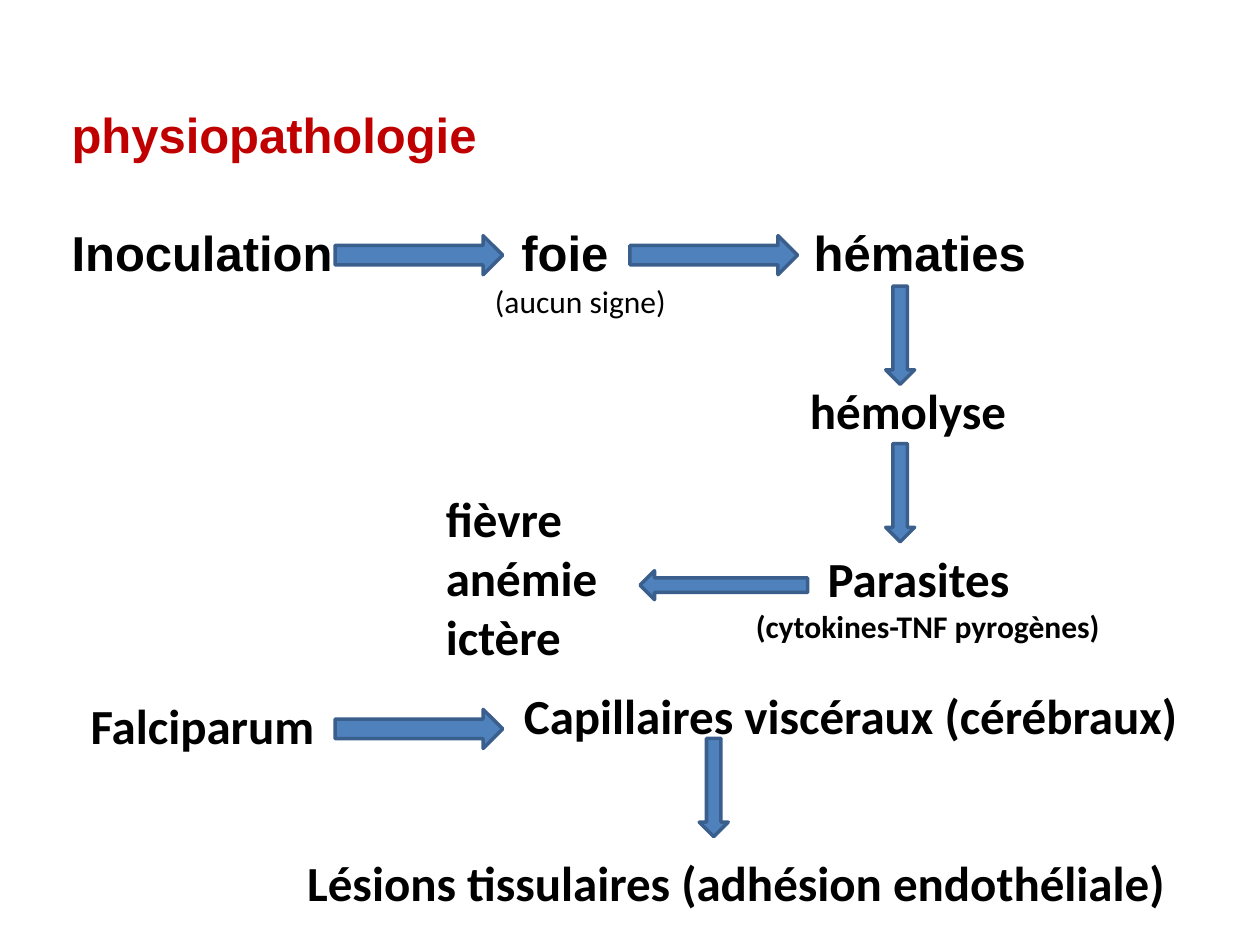
from pptx import Presentation
from pptx.dml.color import RGBColor
from pptx.enum.shapes import MSO_SHAPE as SHAPE
from pptx.util import Inches, Pt

COLORS = {"title": "C00000", "text": "000000", "arrow": "4F81BD", "edge": "3A5F8C"}
LONG, SHORT = 1.33, 0.78
THICK, THIN = 0.31, 0.23


def rgb(name):
    return RGBColor.from_string(COLORS[name])


def add_text(s, x, y, w, h, lines, font="Calibri", size=28, bold=True, color="text"):
    tf = s.shapes.add_textbox(Inches(x), Inches(y), Inches(w), Inches(h)).text_frame
    tf.word_wrap = True
    tf.text = lines
    for p in tf.paragraphs:
        for r in p.runs:
            r.font.name = font
            r.font.size = Pt(size)
            r.font.bold = bold
            r.font.color.rgb = rgb(color)
    return tf


def add_arrow(s, kind, x, y, w, h):
    sp = s.shapes.add_shape(kind, Inches(x), Inches(y), Inches(w), Inches(h))
    sp.shadow.inherit = False
    sp.fill.solid()
    sp.fill.fore_color.rgb = rgb("arrow")
    sp.line.color.rgb = rgb("edge")
    sp.line.width = Pt(2)


def add_title(s, x, y, w, h):
    add_text(s, x, y, w, h, "physiopathologie", font="Arial", color="title")


def add_cycle(s, x, y):
    stages = [("Inoculation", 0, 2.4), ("foie", 3.57, 1.1), ("hématies", 5.89, 2.2)]
    for name, dx, w in stages:
        add_text(s, x + dx, y, w, 0.57, name, font="Arial")
    for dx in (2.19, 4.53):
        add_arrow(s, SHAPE.RIGHT_ARROW, x + dx, y + 0.15, LONG, THICK)
    add_text(s, x + 3.36, y + 0.47, 2.42, 0.4, "(aucun signe)", size=18, bold=False)


def add_hemolysis(s, x, y):
    for dy in (0, 1.25):
        add_arrow(s, SHAPE.DOWN_ARROW, x + 0.7, y + dy, THIN, SHORT)
    add_text(s, x, y + 0.7, 2.42, 0.57, "hémolyse")


def add_symptoms(s, x, y):
    add_text(s, x, y, 2.42, 1.51, "fièvre\nanémie\nictère")
    add_arrow(s, SHAPE.LEFT_ARROW, x + 1.64, y + 0.7, LONG, THIN)
    tf = add_text(s, x + 2.19, y + 0.47, 4.37, 0.88,
                  "Parasites\n(cytokines-TNF pyrogènes)")
    for p, indent in zip(tf.paragraphs, (0.84, 0.27)):
        p._p.get_or_add_pPr().set("marL", str(Inches(indent)))
    tf.paragraphs[1].runs[0].font.size = Pt(18)


def add_falciparum(s, x, y):
    add_text(s, x, y + 0.08, 2.42, 0.57, "Falciparum")
    add_arrow(s, SHAPE.RIGHT_ARROW, x + 2.04, y + 0.24, LONG, THICK)
    add_text(s, x + 3.44, y, 5.94, 0.57, "Capillaires viscéraux (cérébraux)")
    add_arrow(s, SHAPE.DOWN_ARROW, x + 4.93, y + 0.47, THIN, SHORT)
    add_text(s, x + 1.72, y + 1.33, 7.34, 0.57,
             "Lésions tissulaires (adhésion endothéliale)")


def main():
    prs = Presentation()
    prs.slide_width, prs.slide_height = Inches(10), Inches(7.5)
    s = prs.slides.add_slide(prs.slide_layouts[6])
    add_title(s, 0.47, 0.78, 9.14, 0.57)
    add_cycle(s, 0.47, 1.72)
    add_hemolysis(s, 6.33, 2.27)
    add_symptoms(s, 3.44, 3.83)
    add_falciparum(s, 0.62, 5.39)
    prs.save("out.pptx")


if __name__ == "__main__":
    main()
